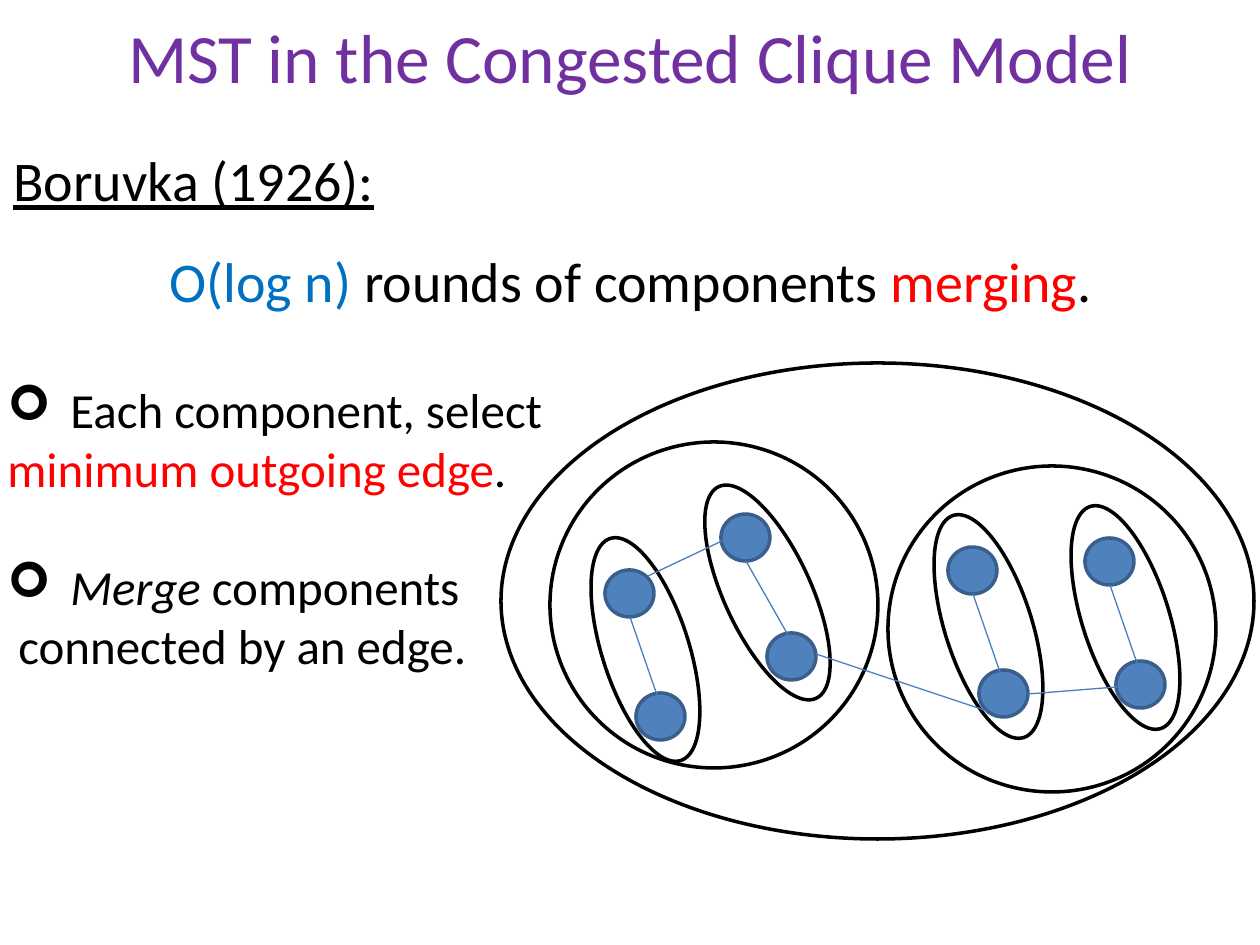
from lxml.etree import SubElement
from pptx import Presentation
from pptx.dml.color import RGBColor
from pptx.enum.shapes import MSO_CONNECTOR, MSO_SHAPE
from pptx.enum.text import MSO_ANCHOR, PP_ALIGN
from pptx.oxml.ns import qn
from pptx.util import Emu, Pt

PX = 914400 / 126
FONT = "Calibri"
COLORS = {
    "title": "7030A0", "ink": "000000", "paper": "FFFFFF", "bound": "0070C0",
    "key": "FF0000", "node": "4F81BD", "node_rim": "3A5F8C", "edge": "4B7EBC",
}
NODE_W, NODE_H = 49, 47
COMPONENT_W, COMPONENT_H = 87, 233
STRAIGHT_NODES = ((3, 37), (34, 160))
TILTED_NODES = ((-3, 38), (43, 157))


def px(length):
    return Emu(round(length * PX))


def color(name):
    return RGBColor.from_string(COLORS[name])


def add_text_frame(slide, left, top, width, height):
    frame = slide.shapes.add_textbox(px(left), px(top), px(width), px(height)).text_frame
    frame.word_wrap = True
    return frame


def write(paragraph, size, *pieces):
    """Fill a paragraph with (text, color name) pieces and return its runs."""
    runs = []
    for words, ink in pieces:
        run = paragraph.add_run()
        run.text = words
        run.font.name, run.font.size = FONT, Pt(size)
        run.font.color.rgb = color(ink)
        runs.append(run)
    return runs


def set_arrow_bullet(paragraph):
    properties = paragraph._p.get_or_add_pPr()
    properties.set("marL", str(px(63)))
    properties.set("indent", str(px(-63)))
    SubElement(properties, qn("a:buFont")).set("typeface", "Wingdings")
    SubElement(properties, qn("a:buChar")).set("char", "➢")


def add_oval(slide, left, top, width, height, fill="paper", rim="ink", rotation=0):
    oval = slide.shapes.add_shape(MSO_SHAPE.OVAL, px(left), px(top), px(width), px(height))
    oval.shadow.inherit = False
    oval.rotation = rotation
    oval.fill.solid()
    oval.fill.fore_color.rgb = color(fill)
    oval.line.color.rgb = color(rim)
    oval.line.width = Pt(2)


def add_edge(slide, x1, y1, x2, y2):
    edge = slide.shapes.add_connector(MSO_CONNECTOR.STRAIGHT, px(x1), px(y1), px(x2), px(y2))
    edge.line.color.rgb = color("edge")
    edge.line.width = Pt(0.75)
    SubElement(edge._element.spPr, qn("a:effectLst"))


def add_title(slide, left, top, width, height):
    frame = add_text_frame(slide, left, top, width, height)
    frame.vertical_anchor = MSO_ANCHOR.MIDDLE
    title = frame.paragraphs[0]
    title.alignment = PP_ALIGN.CENTER
    write(title, 39.6, ("MST in the Congested Clique Model", "title"))


def add_claim(slide, left, top, width, height):
    frame = add_text_frame(slide, left, top, width, height)
    author, bound = frame.paragraphs[0], frame.add_paragraph()
    author.line_spacing = bound.line_spacing = 1.5
    write(author, 32, ("Boruvka (1926):", "ink"))[0].font.underline = True
    bound.alignment = PP_ALIGN.CENTER
    write(bound, 32, ("O(log n) ", "bound"), ("rounds of components ", "ink"),
          ("merging", "key"), (".", "ink"))


def add_steps(slide, left, top, width, height):
    frame = add_text_frame(slide, left, top, width, height)
    select, criterion = frame.paragraphs[0], frame.add_paragraph()
    merge, condition = frame.add_paragraph(), frame.add_paragraph()
    merge.space_before = Pt(34)
    for step in (select, merge):
        set_arrow_bullet(step)
    write(select, 28, ("Each component, select", "ink"))
    write(criterion, 28, ("minimum outgoing edge", "key"), (".", "ink"))
    write(merge, 28, ("Merge", "ink"), (" components", "ink"))[0].font.italic = True
    write(condition, 28, (" connected by an edge.", "ink"))


def add_component(slide, left, top, rotation, nodes):
    """Draw a slanted oval holding two nodes joined by an edge."""
    add_oval(slide, left, top, COMPONENT_W, COMPONENT_H, rotation=rotation)
    for x, y in nodes:
        add_oval(slide, left + x, top + y, NODE_W, NODE_H, "node", "node_rim")
    (upper_x, upper_y), (lower_x, lower_y) = nodes
    add_edge(slide, left + upper_x + 25, top + upper_y + NODE_H,
             left + lower_x + 21, top + lower_y + 2)


def add_merging_diagram(slide, left, top, width, height):
    add_oval(slide, left, top, width, height)
    for x, y in ((49, 79), (387, 103)):
        add_oval(slide, left + x, top + y, 328, 326)
    for x, y, rotation, nodes in (
        (581, 138, 342.4, STRAIGHT_NODES),
        (444, 147, 342.4, STRAIGHT_NODES),
        (223, 113, 335.3, TILTED_NODES),
        (101, 170, 342.4, STRAIGHT_NODES),
    ):
        add_component(slide, left + x, top + y, rotation, nodes)
    for x1, y1, x2, y2 in ((147, 213, 221, 178), (527, 331, 641, 322), (315, 291, 486, 348)):
        add_edge(slide, left + x1, top + y1, left + x2, top + y2)


def main():
    deck = Presentation()
    deck.slide_width, deck.slide_height = px(1260), px(945)
    slide = deck.slides.add_slide(deck.slide_layouts[6])
    add_merging_diagram(slide, 501, 363, 753, 476)
    add_title(slide, 63, -23, 1134, 158)
    add_claim(slide, 1, 106, 1259, 205)
    add_steps(slide, -5, 373, 743, 310)
    deck.save("out.pptx")


if __name__ == "__main__":
    main()
